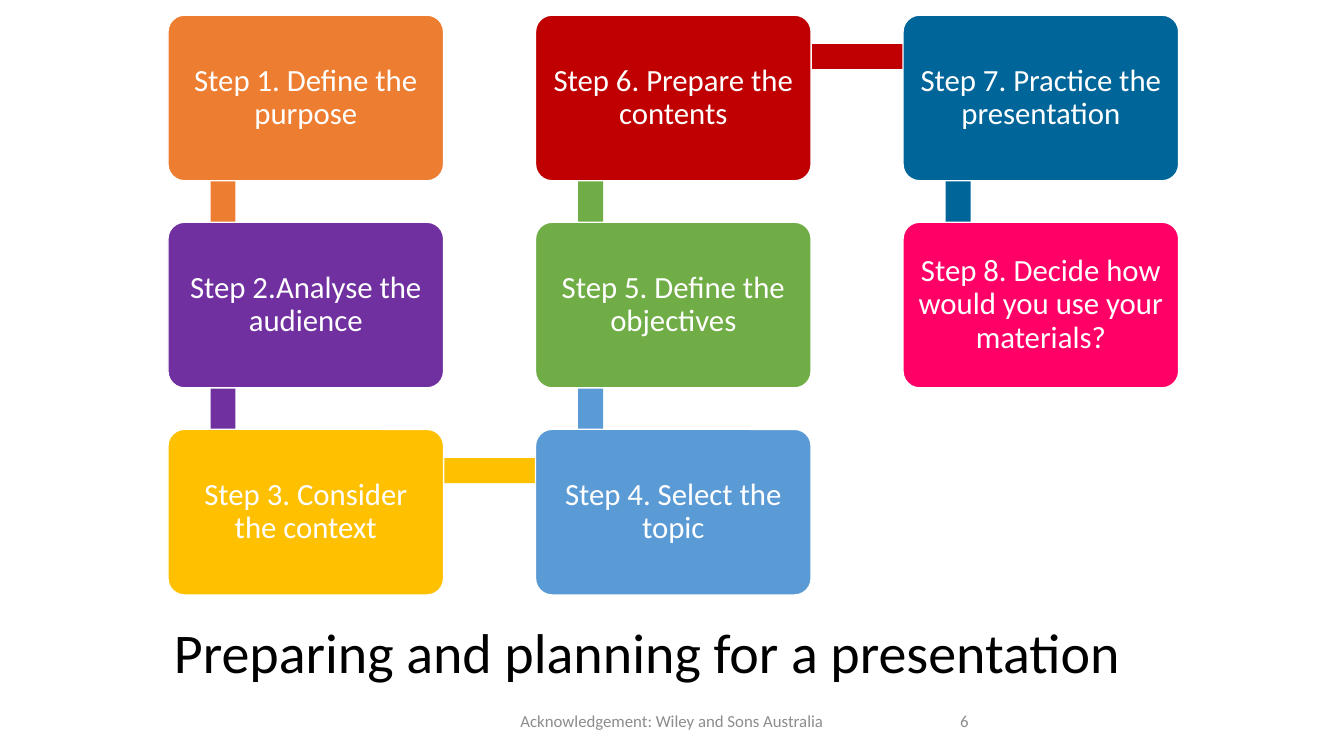
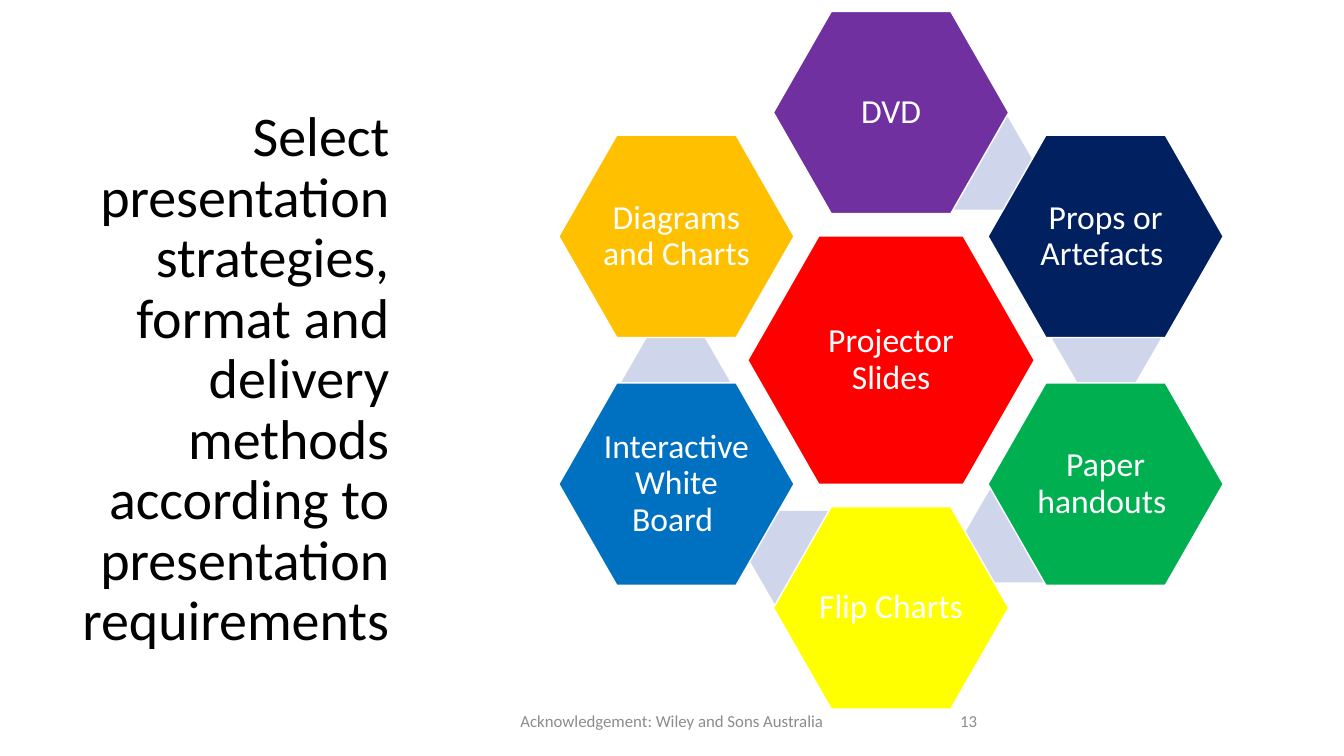
from collections import namedtuple
from math import cos, radians, sin

from pptx import Presentation
from pptx.dml.color import RGBColor
from pptx.enum.shapes import MSO_SHAPE as Shape
from pptx.enum.text import MSO_ANCHOR as Anchor, PP_ALIGN as Align
from pptx.util import Inches, Pt

Box = namedtuple("Box", "left top width height")

PAGE = Box(0, 0, 13.33, 7.5)
FONT = "Calibri"
WHITE, BLACK, GREY, PALE = "FFFFFF", "000000", "8C8C8C", "CFD5EA"
CREDIT = "Acknowledgement: Wiley and Sons Australia"

TITLE = dict(size=40, color=BLACK, spacing=0.9)
FOOTER = dict(size=12, color=GREY)
STEP = dict(size=22, color=WHITE, spacing=0.9, inset=0.09)
OPTION = dict(size=24, color=WHITE, spacing=0.9, inset=0.03)

STEPS = [
    ("Step 1. Define the purpose", "ED7D31"),
    ("Step 2.Analyse the audience", "7030A0"),
    ("Step 3. Consider the context", "FFC000"),
    ("Step 4. Select the topic", "5B9BD5"),
    ("Step 5. Define the objectives", "70AD47"),
    ("Step 6. Prepare the contents", "C00000"),
    ("Step 7. Practice the presentation", "006699"),
    ("Step 8. Decide how would you use your materials?", "FF0066"),
]
CORE = ("Projector Slides", "FF0000")
RING = [
    ("DVD", "7030A0"),
    ("Props or Artefacts ", "002060"),
    ("Paper handouts ", "00B050"),
    ("Flip Charts ", "FFFF00"),
    ("Interactive White Board ", "0070C0"),
    ("Diagrams and Charts", "FFC000"),
]


def rgb(color):
    return RGBColor.from_string(color)


def share(box, left, top, width, height):
    """Return the part of a box given as shares of its size."""
    return Box(box.left + left * box.width, box.top + top * box.height,
               width * box.width, height * box.height)


def centred(x, y, width, height):
    return Box(x - width / 2, y - height / 2, width, height)


def write(shape, text, size, color, align=Align.CENTER, anchor=Anchor.MIDDLE,
          spacing=1.0, inset=None):
    frame = shape.text_frame
    frame_format = dict(word_wrap=True, vertical_anchor=anchor)
    if inset is not None:
        for side in ("left", "right", "top", "bottom"):
            frame_format[f"margin_{side}"] = Inches(inset)
    para = frame.paragraphs[0]
    span = para.add_run()
    span.text = text
    span.font.color.rgb = rgb(color)
    formats = [
        (frame, frame_format),
        (para, dict(alignment=align, line_spacing=spacing)),
        (span.font, dict(name=FONT, size=Pt(size))),
    ]
    for target, values in formats:
        for name, value in values.items():
            setattr(target, name, value)


def add_text(page, box, text, **style):
    write(page.shapes.add_textbox(*map(Inches, box)), text, **style)


def add_block(page, kind, box, fill, adjust=None, outline=None):
    block = page.shapes.add_shape(kind, *map(Inches, box))
    block.shadow.inherit = False
    block.fill.solid()
    block.fill.fore_color.rgb = rgb(fill)
    if outline:
        block.line.color.rgb = rgb(outline)
        block.line.width = Pt(1)
    else:
        block.line.fill.background()
    if adjust is not None:
        block.adjustments[0] = adjust
    return block


def add_page(deck, number):
    """Add a blank page with the credit and the page number in its footer."""
    page = deck.slides.add_slide(deck.slide_layouts[6])
    add_text(page, share(PAGE, 0.33, 0.927, 0.34, 0.053), CREDIT, **FOOTER)
    add_text(page, share(PAGE, 0.707, 0.927, 0.225, 0.053), str(number),
             align=Align.LEFT, **FOOTER)
    return page


def add_step_flow(page, box, steps, rows=3, columns=3):
    """Lay steps in a snake of columns, each joined to the next by a bar."""
    column_gap, row_gap = 1 / 3, 1 / 4
    width = box.width / (columns + (columns - 1) * column_gap)
    height = box.height / (rows + (rows - 1) * row_gap)
    thickness = 0.15 * height

    cells = []
    for index in range(len(steps)):
        column, row = divmod(index, rows)
        if column % 2:
            row = rows - 1 - row
        cells.append(Box(box.left + column * width * (1 + column_gap),
                         box.top + row * height * (1 + row_gap), width, height))

    joints = [(cell.left + 0.2 * width, cell.top + 0.25 * height) for cell in cells]
    for index, ((text, color), cell) in enumerate(zip(steps, cells)):
        if index + 1 < len(steps):
            (x1, y1), (x2, y2) = joints[index:index + 2]
            bar = centred((x1 + x2) / 2, (y1 + y2) / 2,
                          max(abs(x2 - x1), thickness), max(abs(y2 - y1), thickness))
            add_block(page, Shape.RECTANGLE, bar, color)
        card = add_block(page, Shape.ROUNDED_RECTANGLE, cell, color, 0.1, WHITE)
        write(card, text, **STEP)


def add_hexagon_ring(page, box, core, ring):
    """Set a core hexagon amid a ring, with pale links between neighbours."""
    middle_x, middle_y = box.left + box.width / 2, box.top + box.height / 2
    turn = 360 / len(ring)

    def spot(angle, radius, width, height):
        """Return a box at a clockwise angle from the top of the ring."""
        x = middle_x + radius * box.height * sin(radians(angle))
        y = middle_y - radius * box.height * cos(radians(angle))
        return centred(x, y, width * box.width, height * box.height)

    def add_option(place, text, color):
        write(add_block(page, Shape.HEXAGON, place, color, 0.286, WHITE), text, **OPTION)

    add_option(spot(0, 0, 0.43, 0.356), *core)
    for index, option in enumerate(ring):
        angle = index * turn
        if index + 1 < len(ring):
            link = spot(angle + 24.4, 0.31, 0.162, 0.133)
            add_block(page, Shape.HEXAGON, link, PALE, 0.289)
        add_option(spot(angle, 0.355, 0.353, 0.29), *option)


def main():
    deck = Presentation()
    deck.slide_width, deck.slide_height = Inches(PAGE.width), Inches(PAGE.height)

    page = add_page(deck, 6)
    add_step_flow(page, share(PAGE, 0.125, 0.02, 0.752, 0.767), STEPS)
    add_text(page, share(PAGE, 0.09, 0.808, 0.792, 0.119),
             "Preparing and planning for a presentation ", **TITLE)

    page = add_page(deck, 13)
    add_text(page, share(PAGE, 0.034, 0.127, 0.263, 0.743),
             "Select presentation strategies, format and delivery methods "
             "according to presentation requirements",
             align=Align.RIGHT, anchor=Anchor.BOTTOM, **TITLE)
    add_hexagon_ring(page, share(PAGE, 0.415, 0.015, 0.496, 0.923), CORE, RING)

    deck.save("out.pptx")


if __name__ == "__main__":
    main()
